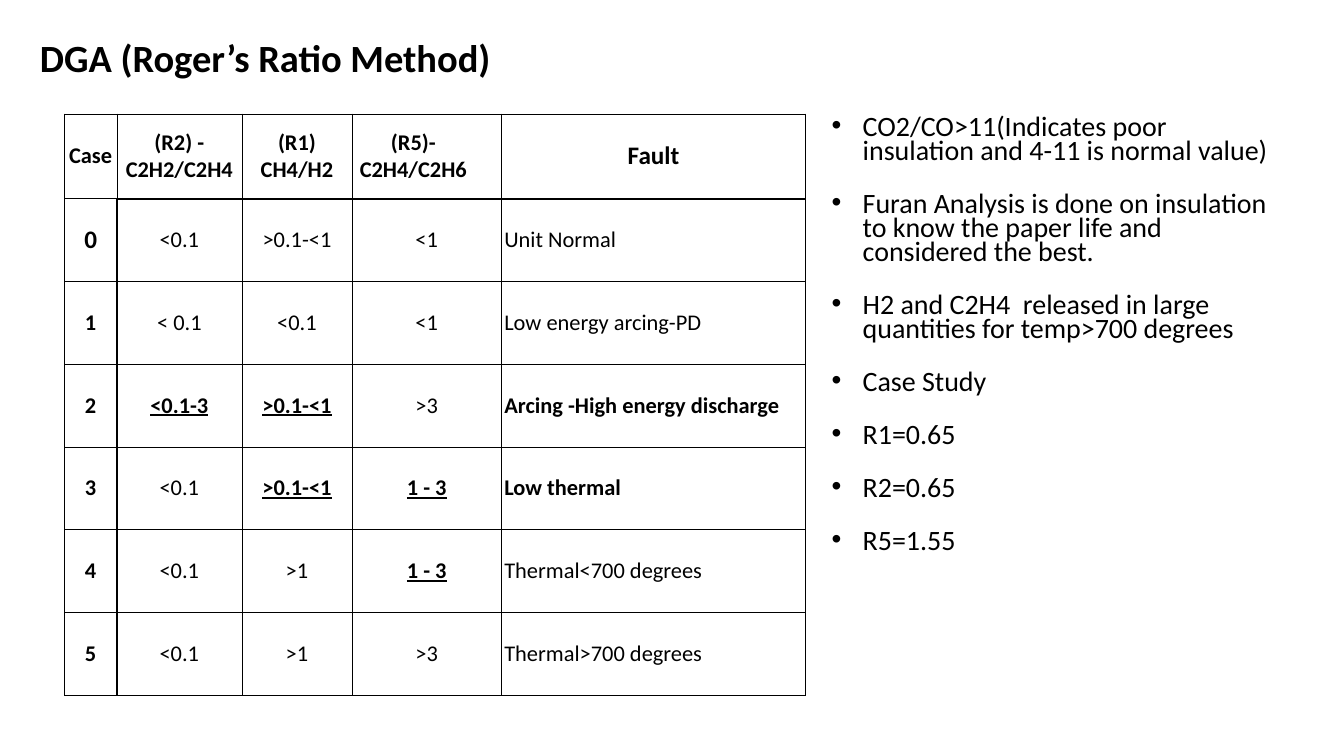
from lxml.etree import SubElement
from pptx import Presentation
from pptx.dml.color import RGBColor
from pptx.enum.text import MSO_ANCHOR, MSO_AUTO_SIZE, PP_ALIGN
from pptx.oxml.ns import qn
from pptx.util import Cm, Pt

INK = "000000"
TITLE = "DGA (Roger’s Ratio Method)"
NOTES = [
    "CO2/CO>11(Indicates poor insulation and 4-11 is normal value)",
    "Furan Analysis is done on insulation to know the paper life and considered the best.",
    "H2 and C2H4  released in large quantities for temp>700 degrees",
    "Case Study",
    "R1=0.65",
    "R2=0.65",
    "R5=1.55",
]
RATIOS = [
    ["Case", "(R2) -\nC2H2/C2H4", "(R1)\nCH4/H2", "(R5)-\nC2H4/C2H6", "Fault"],
    ["0", "<0.1", ">0.1-<1", "<1", "Unit Normal"],
    ["1", "< 0.1", "<0.1", "<1", "Low energy arcing-PD"],
    ["2", "<0.1-3", ">0.1-<1", ">3", "Arcing -High energy discharge"],
    ["3", "<0.1", ">0.1-<1", "1 - 3", "Low thermal"],
    ["4", "<0.1", ">1", "1 - 3", "Thermal<700 degrees"],
    ["5", "<0.1", ">1", ">3", "Thermal>700 degrees"],
]
COLUMN_WIDTHS = [2.64, 6.3, 5.56, 7.52, 15.34]
HEADER_HEIGHT, CASE_HEIGHT = 4.27, 4.17
FAULT_COLUMN = 4
KEY_RATIOS = {(3, 1), (3, 2), (4, 2), (4, 3), (5, 3)}
KEY_FAULTS = {(3, FAULT_COLUMN), (4, FAULT_COLUMN)}
LARGE_CELLS = {(0, FAULT_COLUMN), (1, 0)}
R5_HEADING = (0, 3)


def color(hex_value):
    return RGBColor.from_string(hex_value)


def apply(target, values):
    for name, value in values.items():
        setattr(target, name, value)


def margins(size):
    return {f"margin_{side}": Cm(size) for side in ("left", "right", "top", "bottom")}


def write(paragraph, text, size, bold=False, underline=False, **layout):
    paragraph.text = text
    apply(paragraph, layout)
    for run in paragraph.runs:
        apply(run.font, {"name": "Calibri", "size": Pt(size), "bold": bold, "underline": underline})
        run.font.color.rgb = color(INK)


def place(placeholder, left, top, width, height, anchor):
    apply(placeholder, {"left": Cm(left), "top": Cm(top), "width": Cm(width), "height": Cm(height)})
    apply(placeholder.text_frame, margins(0.13) | {
        "vertical_anchor": anchor, "word_wrap": True, "auto_size": MSO_AUTO_SIZE.NONE})
    return placeholder.text_frame


def add_title(slide):
    heading = place(slide.shapes.title, 1.88, 1.45, 61.04, 2.82, MSO_ANCHOR.MIDDLE)
    write(heading.paragraphs[0], TITLE, 55, bold=True, alignment=PP_ALIGN.LEFT)


def add_notes(slide):
    notes = place(slide.placeholders[1], 41.78, 5.77, 22.5, 27.84, MSO_ANCHOR.TOP)
    for index, note in enumerate(NOTES):
        paragraph = notes.add_paragraph() if index else notes.paragraphs[0]
        write(paragraph, note, 40, line_spacing=0.72, space_before=Pt(41))
        properties = paragraph.get_or_add_pPr() if hasattr(paragraph, "get_or_add_pPr") else paragraph._p.get_or_add_pPr()
        properties.set("marL", str(Cm(1.57)))
        properties.set("indent", str(-Cm(1.57)))


def draw_borders(cell, row, column):
    is_case, is_ratio = row > 0, column > 0
    weights = {
        "L": 3 if is_case and column == 1 else 1,
        "R": 3 if is_case and not is_ratio else 1,
        "T": 3 if is_ratio and row == 1 else 1,
        "B": 3 if is_ratio and not is_case else 1,
    }
    properties = cell._tc.get_or_add_tcPr()
    for position, (side, weight) in enumerate(weights.items()):
        border = SubElement(properties, qn(f"a:ln{side}"), w=str(Pt(weight)))
        fill = SubElement(border, qn("a:solidFill"))
        SubElement(fill, qn("a:srgbClr"), val=INK)
        properties.insert(position, border)


def fill_cell(cell, text, row, column):
    spot = (row, column)
    is_large = spot in LARGE_CELLS
    is_key = spot in KEY_RATIOS
    is_fault = row > 0 and column == FAULT_COLUMN
    cell.fill.background()
    apply(cell, margins(0 if is_large else 0.15) | {"vertical_anchor": MSO_ANCHOR.MIDDLE})
    if spot == R5_HEADING:
        cell.margin_right = Cm(1.5)
    write(
        cell.text_frame.paragraphs[0], text, 36 if is_large else 32,
        bold=row == 0 or column == 0 or is_key or spot in KEY_FAULTS,
        underline=is_key,
        alignment=PP_ALIGN.LEFT if is_fault else PP_ALIGN.CENTER,
    )
    draw_borders(cell, row, column)


def add_ratio_table(slide):
    heights = [HEADER_HEIGHT] + [CASE_HEIGHT] * (len(RATIOS) - 1)
    ratios = slide.shapes.add_table(
        len(RATIOS), len(COLUMN_WIDTHS), Cm(3.25), Cm(5.74),
        Cm(sum(COLUMN_WIDTHS)), Cm(sum(heights))).table
    apply(ratios, {"first_row": False, "horz_banding": False})
    for column, width in zip(ratios.columns, COLUMN_WIDTHS):
        column.width = Cm(width)
    for row, (height, texts) in enumerate(zip(heights, RATIOS)):
        ratios.rows[row].height = Cm(height)
        for column, text in enumerate(texts):
            fill_cell(ratios.cell(row, column), text, row, column)


def main():
    presentation = Presentation()
    apply(presentation, {"slide_width": Cm(67.74), "slide_height": Cm(38.1)})
    slide = presentation.slides.add_slide(presentation.slide_layouts[1])
    add_title(slide)
    add_notes(slide)
    add_ratio_table(slide)
    presentation.save("out.pptx")


if __name__ == "__main__":
    main()
